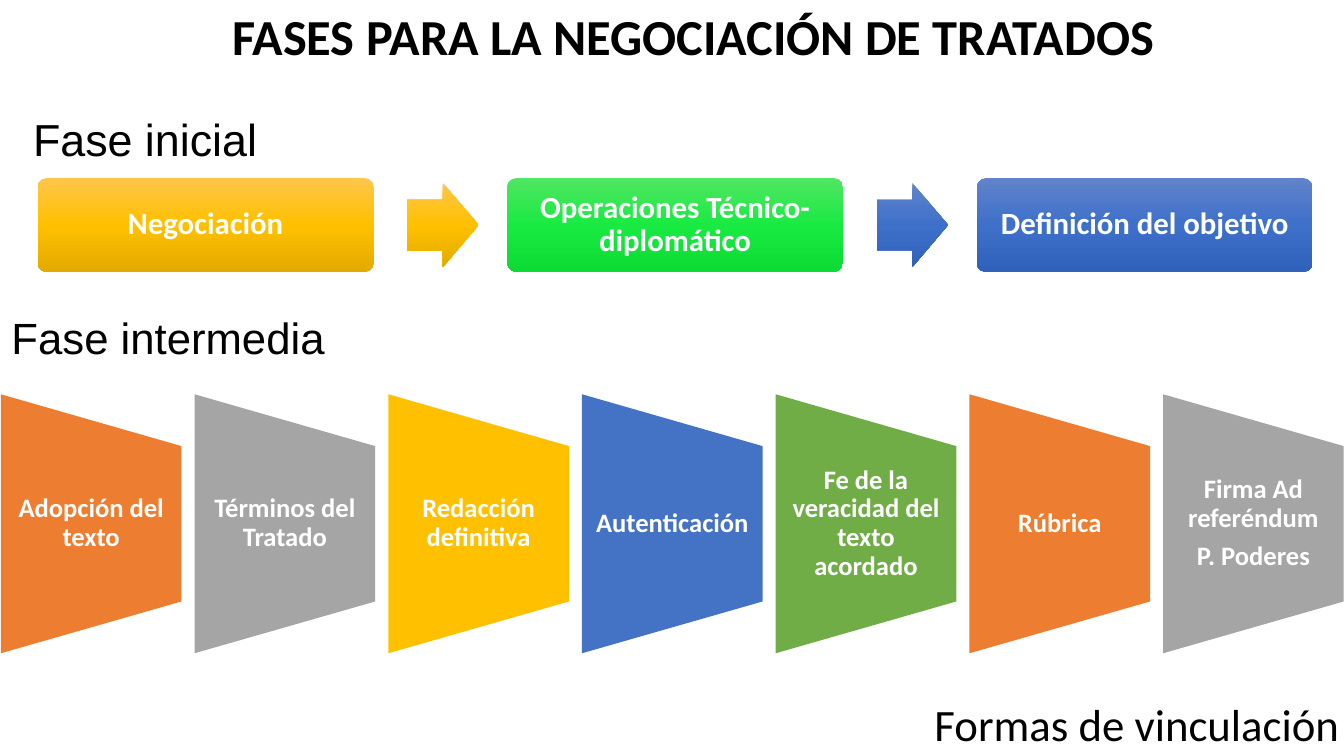
from copy import deepcopy
from dataclasses import dataclass

from pptx import Presentation
from pptx.dml.color import RGBColor
from pptx.enum.shapes import MSO_SHAPE
from pptx.enum.text import MSO_ANCHOR, MSO_AUTO_SIZE, PP_ALIGN
from pptx.oxml.ns import qn
from pptx.util import Pt

ROUND = MSO_SHAPE.ROUNDED_RECTANGLE
ARROW = MSO_SHAPE.RIGHT_ARROW
TRAP = MSO_SHAPE.FLOWCHART_MANUAL_OPERATION
MID, LOW = MSO_ANCHOR.MIDDLE, MSO_ANCHOR.BOTTOM
MIDDLE, RIGHT = PP_ALIGN.CENTER, PP_ALIGN.RIGHT
NO_FIT = MSO_AUTO_SIZE.NONE


@dataclass(frozen=True)
class Theme:
    """Colours, fonts and type sizes of the slide."""
    ink: str = "000000"
    white: str = "FFFFFF"
    gold: tuple = ("FFC64B", "FFC000", "E3AB00")
    lime: tuple = ("51E663", "19EA42", "0CDB34")
    blue: tuple = ("6183CB", "3E70CA", "3062BB")
    flat: tuple = ("ED7D31", "A5A5A5", "FFC000", "4472C4", "70AD47")
    body: str = "Calibri"
    head: str = "Arial"
    title: float = 36
    phase: float = 32
    inter: float = 31.2
    step: float = 22
    stage: float = 19


THEME = Theme()


def apply(item, values):
    """Set each attribute of an item from a dict."""
    for name, value in values.items():
        setattr(item, name, value)


def place(item, box):
    """Move an item to a box given in points."""
    apply(item, dict(zip(("left", "top", "width", "height"), map(Pt, box))))


def write(item, lines, size, color, font=THEME.body, bold=False,
          align=MIDDLE, anchor=MID, pad=(7.2, 3.6), after=0):
    """Fill an item with formatted paragraphs."""
    frame = item.text_frame
    side, edge = map(Pt, pad)
    frame.text = "\n".join(lines)
    apply(frame, {"word_wrap": True, "auto_size": NO_FIT,
                  "vertical_anchor": anchor,
                  "margin_left": side, "margin_right": side,
                  "margin_top": edge, "margin_bottom": edge})
    for par in frame.paragraphs:
        apply(par, {"alignment": align, "line_spacing": 0.9,
                    "space_before": Pt(0), "space_after": Pt(after)})
        for run in par.runs:
            apply(run.font, {"name": font, "size": Pt(size), "bold": bold})
            run.font.color.rgb = RGBColor.from_string(color)


def label(slide, box, lines, size, color, **style):
    """Add a text box."""
    item = slide.shapes.add_textbox(*map(Pt, box))
    write(item, lines, size, color, **style)


def draw(slide, kind, box, fill, adjust=()):
    """Add a borderless shape with a flat or three-stop fill."""
    item = slide.shapes.add_shape(kind, *map(Pt, box))
    item.shadow.inherit = False
    item.line.fill.background()
    for i, value in enumerate(adjust):
        item.adjustments[i] = value
    if isinstance(fill, str):
        item.fill.solid()
        item.fill.fore_color.rgb = RGBColor.from_string(fill)
        return item
    item.fill.gradient()
    item.fill.gradient_angle = 270
    stops = item.element.spPr.find(".//" + qn("a:gsLst"))
    stops.append(deepcopy(stops[0]))
    for i, stop in enumerate(item.fill.gradient_stops):
        stop.position = i / 2
        stop.color.rgb = RGBColor.from_string(fill[i])
    return item


def heading(slide, box):
    """Format the title in its box."""
    item = slide.shapes.title
    place(item, box)
    write(item, ["FASES PARA LA NEGOCIACIÓN DE TRATADOS"], THEME.title,
          THEME.ink, bold=True, anchor=LOW)


def initial(slide, box):
    """Draw the three steps of the first phase, joined by arrows."""
    left, top, width, high = box
    steps = (("Negociación", THEME.gold),
             ("Operaciones Técnico-diplomático", THEME.lime),
             ("Definición del objetivo", THEME.blue))
    arrows = (THEME.gold, THEME.blue)
    wide = 240
    pitch = (width - wide) / (len(steps) - 1)
    for i, (text, fill) in enumerate(steps):
        x = left + i * pitch
        card = draw(slide, ROUND, (x, top, wide, high), fill, (0.1,))
        write(card, [text], THEME.step, THEME.white, bold=True, pad=(8.5, 8.5))
        if i < len(arrows):
            draw(slide, ARROW, (x + wide + 24, top + (high - 60) / 2, 51, 60),
                 arrows[i], (0.6, 0.5))


def middle(slide, box):
    """Draw the row of tapered stages of the second phase."""
    left, top, width, high = box
    stages = (["Adopción del texto"], ["Términos del Tratado"],
              ["Redacción definitiva"], ["Autenticación"],
              ["Fe de la veracidad del texto acordado"], ["Rúbrica"],
              ["Firma Ad referéndum", "P. Poderes"])
    wide = 129
    pitch = (width - wide) / (len(stages) - 1)
    turn = (high - wide) / 2
    for i, lines in enumerate(stages):
        x = left + i * pitch
        fill = THEME.flat[i % len(THEME.flat)]
        item = draw(slide, TRAP, (x - turn, top + turn, high, wide), fill)
        item.rotation = 270
        label(slide, (x, top + high / 5, wide, high * 0.6), lines,
              THEME.stage, THEME.white, bold=True, pad=(9.5, 0), after=6.65)


def main():
    """Build and save the slide."""
    deck = Presentation()
    apply(deck, {"slide_width": Pt(960), "slide_height": Pt(540)})
    slide = deck.slides.add_slide(deck.slide_layouts[5])
    heading(slide, (0, 0, 990.7, 51))
    label(slide, (-223.2, 72, 653.8, 50.4), ["Fase inicial"], THEME.phase,
          THEME.ink, font=THEME.head, anchor=LOW)
    initial(slide, (26.8, 127.2, 910.8, 67))
    label(slide, (-409, 212.4, 648, 51), ["Fase intermedia"], THEME.inter,
          THEME.ink, font=THEME.head, align=RIGHT, anchor=LOW)
    middle(slide, (0.6, 281.6, 959.2, 185))
    label(slide, (506.2, 478.8, 612, 61.2), ["Formas de vinculación"],
          THEME.phase, THEME.ink, anchor=LOW)
    deck.save("out.pptx")


if __name__ == "__main__":
    main()
